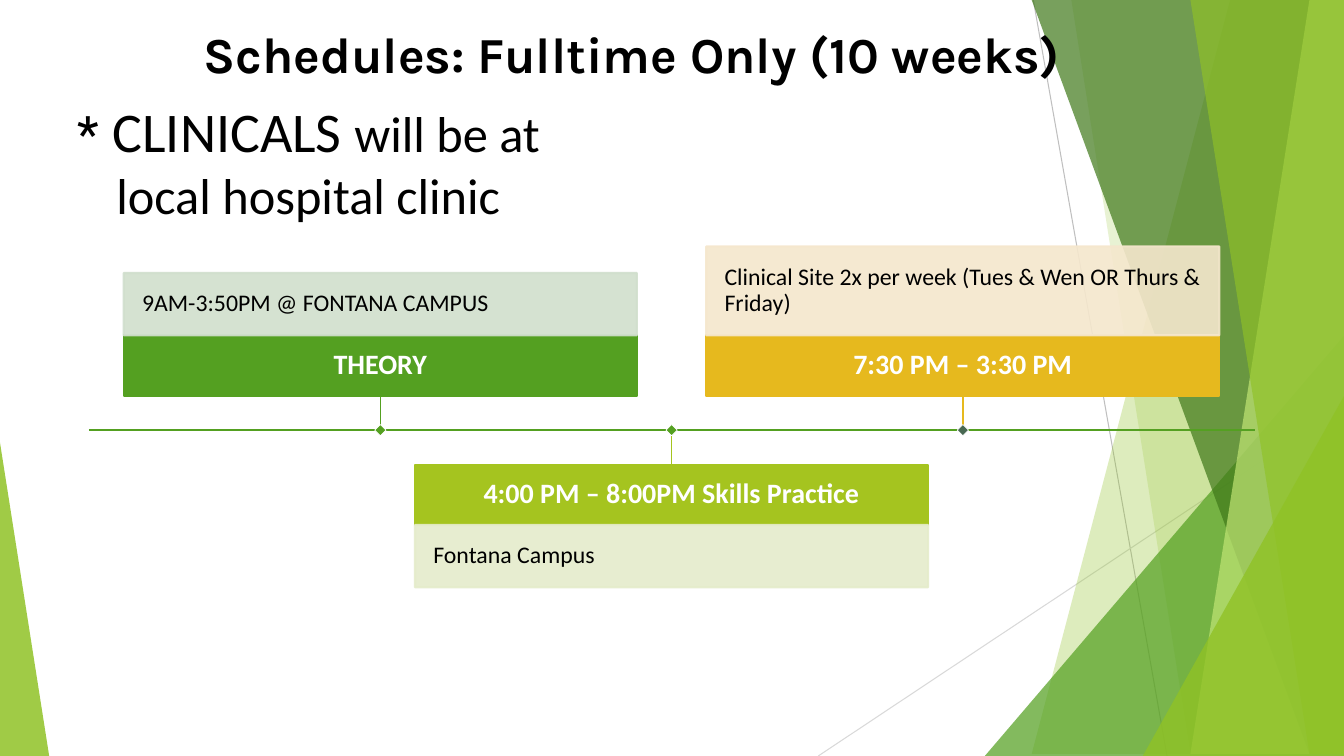
from lxml.etree import SubElement
from pptx import Presentation
from pptx.dml.color import RGBColor
from pptx.enum.shapes import MSO_CONNECTOR, MSO_SHAPE
from pptx.enum.text import MSO_ANCHOR, MSO_AUTO_SIZE, PP_ALIGN
from pptx.oxml.ns import qn
from pptx.util import Cm, Pt

COLORS = {
    "black": "000000", "white": "FFFFFF", "gray": "BFBFBF", "pale gray": "D9D9D9",
    "lime": "90C226", "light lime": "C0E474", "green": "54A021", "dark green": "3F7819",
    "olive": "A5C41F", "gold": "E6B91E", "slate": "486852",
    "green tint": "D1DFCD", "olive tint": "E5ECCB", "gold tint": "F5E7CD",
}
WIDTH, HEIGHT = 33.87, 19.05


def paint(shape, color, opacity=100, line=None, line_width=1.5):
    shape.shadow.inherit = False
    shape.fill.solid()
    shape.fill.fore_color.rgb = RGBColor.from_string(COLORS[color])
    if line:
        shape.line.color.rgb = RGBColor.from_string(COLORS[line])
        shape.line.width = Pt(line_width)
    else:
        shape.line.fill.background()
    if opacity < 100:
        for tint in shape.element.spPr.iter(qn("a:srgbClr")):
            SubElement(tint, qn("a:alpha"), val=str(opacity * 1000))


def draw_line(x1, y1, x2, y2, color, width):
    connector = slide.shapes.add_connector(
        MSO_CONNECTOR.STRAIGHT, Cm(x1), Cm(y1), Cm(x2), Cm(y2))
    connector.line.color.rgb = RGBColor.from_string(COLORS[color])
    connector.line.width = Pt(width)
    SubElement(connector.element.spPr, qn("a:effectLst"))


deck = Presentation()
deck.slide_width, deck.slide_height = Cm(WIDTH), Cm(HEIGHT)
slide = deck.slides.add_slide(deck.slide_layouts[6])

# Background facets, from back to front
draw_line(26.04, 0, 29.41, HEIGHT, "gray", 0.75)
draw_line(WIDTH, 10.24, 20.62, HEIGHT, "pale gray", 0.75)

# Bands reach the right edge: (top x, bottom x, color, opacity)
# Triangles: (left, top, width, apex, color, opacity)
facets = [
    (31.19, 25.5, "lime", 30),
    (26.67, 30.05, "lime", 20),
    (24.82, 8.46, 9.05, 1, "green", 72),
    (25.93, 32.79, "dark green", 70),
    (33.1, 30.28, "light lime", 70),
    (30.38, 33.48, "lime", 65),
    (28.8, 9.98, 5.07, 1, "lime", 80),
    (0, 11.15, 1.24, 0, "lime", 85),
]
for *geometry, color, opacity in facets:
    if len(geometry) == 2:
        top_x, bottom_x = geometry
        outline = slide.shapes.build_freeform(top_x, 0, scale=Cm(1))
        outline.add_line_segments([(WIDTH, 0), (WIDTH, HEIGHT), (bottom_x, HEIGHT)])
        facet = outline.convert_to_shape()
    else:
        left, top, width, apex = geometry
        facet = slide.shapes.add_shape(
            MSO_SHAPE.ISOSCELES_TRIANGLE, Cm(left), Cm(top), Cm(width), Cm(HEIGHT - top))
        facet.adjustments[0] = apex
    paint(facet, color, opacity)

# Title
title = slide.shapes.add_textbox(Cm(4.88), Cm(0.46), Cm(24.1), Cm(4.67)).text_frame
title.word_wrap = True
heading = title.paragraphs[0]
heading.text = "Schedules: Fulltime Only (10 weeks)"
heading.font.name, heading.font.size, heading.font.bold = "Karla", Pt(36), True
heading.font.color.rgb = RGBColor.from_string(COLORS["black"])

# Timeline
AXIS_Y, STEM = 10.84, 0.87
CARD_LEFT, CARD_STEP, CARD_WIDTH, HEADER_HEIGHT = 3.12, 7.34, 12.93, 1.52
MARKER = 0.2
draw_line(2.24, AXIS_Y, 31.62, AXIS_Y, "green", 1.5)

# (header, detail, detail height, above axis, color, tint, marker color)
sessions = [
    ("THEORY", "9AM-3:50PM @ FONTANA CAMPUS", 1.57, True,
     "green", "green tint", "green"),
    ("4:00 PM – 8:00PM Skills Practice", "Fontana Campus", 1.57, False,
     "olive", "olive tint", "green"),
    ("7:30 PM – 3:30 PM", "Clinical Site 2x per week (Tues & Wen OR Thurs & Friday)", 2.24, True,
     "gold", "gold tint", "slate"),
]
for i, (header, detail, detail_height, above, color, tint, marker_color) in enumerate(sessions):
    left = CARD_LEFT + i * CARD_STEP
    middle = left + CARD_WIDTH / 2
    if above:
        stem_end = AXIS_Y - STEM
        header_top = stem_end - HEADER_HEIGHT
        detail_top = header_top - detail_height
    else:
        stem_end = header_top = AXIS_Y + STEM
        detail_top = header_top + HEADER_HEIGHT

    # Header and detail boxes
    for text, top, height, fill, opacity, inset, size, ink, align in [
        (header, header_top, HEADER_HEIGHT, color, 100, 0.28, 20, "white", PP_ALIGN.CENTER),
        (detail, detail_top, detail_height, tint, 90, 0.46, 17, "black", PP_ALIGN.LEFT),
    ]:
        box = slide.shapes.add_shape(
            MSO_SHAPE.RECTANGLE, Cm(left), Cm(top), Cm(CARD_WIDTH), Cm(height))
        paint(box, fill, opacity, line=fill)
        frame = box.text_frame
        frame.word_wrap = True
        frame.vertical_anchor = MSO_ANCHOR.MIDDLE
        frame.margin_left = frame.margin_right = Cm(inset)
        frame.margin_top = frame.margin_bottom = Cm(inset)
        label = frame.paragraphs[0]
        label.text = text
        label.alignment, label.line_spacing = align, 0.9
        label.font.name, label.font.size = "Calibri", Pt(size)
        label.font.bold = text == header
        label.font.color.rgb = RGBColor.from_string(COLORS[ink])

    # Stem and axis marker
    draw_line(middle, stem_end, middle, AXIS_Y, color, 1)
    marker = slide.shapes.add_shape(
        MSO_SHAPE.RECTANGLE, Cm(middle - MARKER / 2), Cm(AXIS_Y - MARKER / 2),
        Cm(MARKER), Cm(MARKER))
    marker.rotation = 45
    paint(marker, marker_color, line="white", line_width=0.5)

# Clinicals note
note = slide.shapes.add_textbox(Cm(1.14), Cm(2.31), Cm(13.26), Cm(3.51)).text_frame
note.word_wrap = True
note.auto_size = MSO_AUTO_SIZE.SHAPE_TO_FIT_TEXT
clinicals = note.paragraphs[0]
clinicals.alignment = PP_ALIGN.CENTER
clinicals.font.color.rgb = RGBColor.from_string(COLORS["black"])
for text, font_name, size in [
    ("* ", "Roboto Slab", 36),
    ("CLINICALS ", "Calibri", 40),
    ("will be at local hospital clinic", "Calibri", 36),
]:
    run = clinicals.add_run()
    run.text = text
    run.font.name, run.font.size = font_name, Pt(size)

deck.save("out.pptx")
